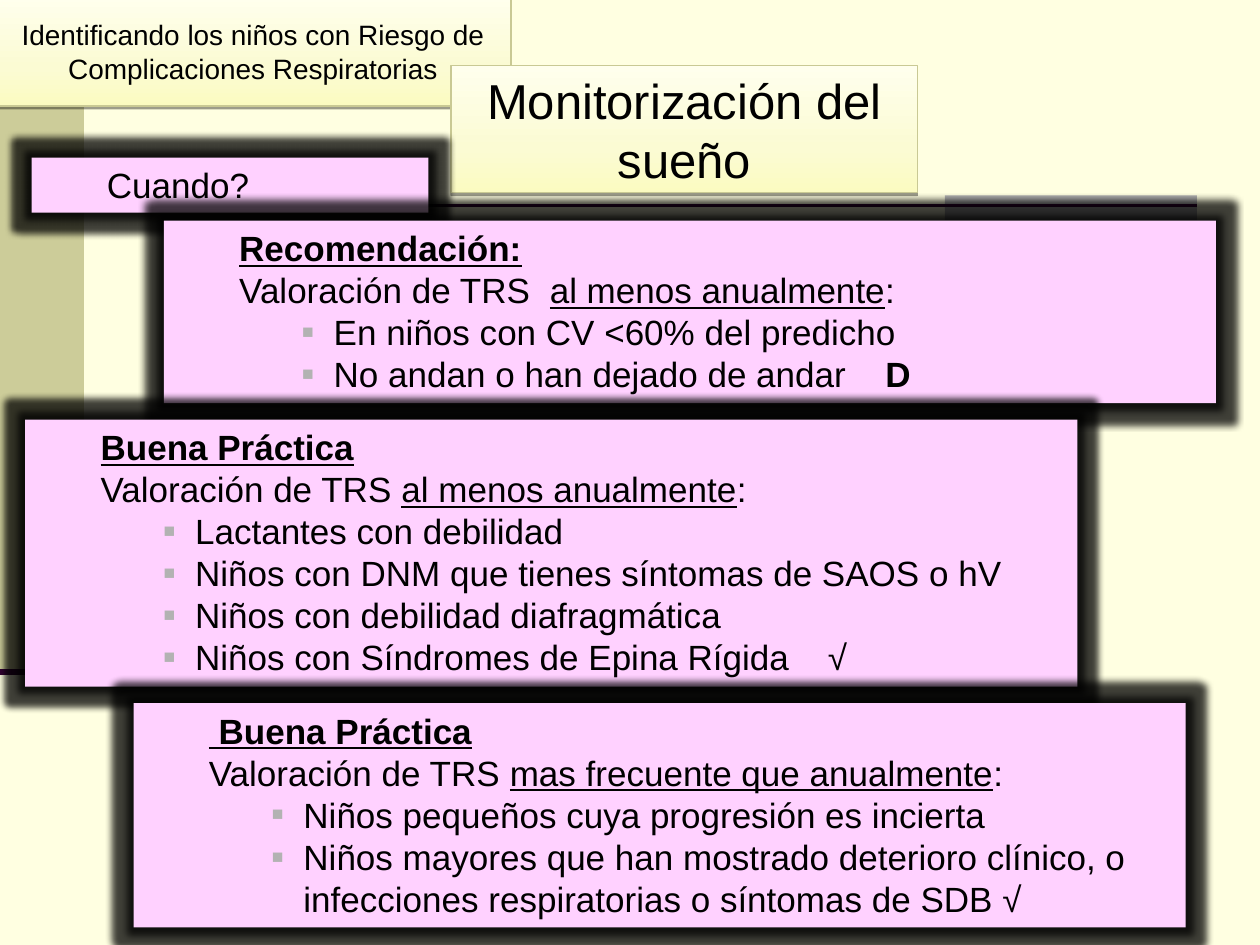
"""Build a slide of sleep-monitoring recommendations for children at respiratory risk."""
from dataclasses import dataclass

from lxml import etree
from pptx import Presentation
from pptx import util as u
from pptx.dml.color import RGBColor
from pptx.enum import shapes, text
from pptx.oxml import ns


@dataclass(frozen=True)
class Theme:
    page: str = "FFFFE1"
    band: str = "CCCC99"
    accent: str = "B2B2B2"
    rule: str = "330033"
    panel: str = "FFD1FF"
    edge: str = "C9C994"
    ink: str = "000000"
    gradient: tuple = ((0, "FFFFED"), (65, "FBFBD3"), (100, "FBFBC1"))
    font: str = "Arial"
    header: int = 16
    title: int = 28
    body: int = 20


def rgb(value):
    return RGBColor.from_string(value)


def add_xml(parent, tag, **attrs):
    child = etree.SubElement(parent, ns.qn(tag))
    for name, value in attrs.items():
        child.set(name, str(value))
    return child


def add_color(parent, value, alpha=100):
    color = add_xml(parent, "a:srgbClr", val=value)
    if alpha < 100:
        add_xml(color, "a:alpha", val=alpha * 1000)


class SlideBuilder:
    def __init__(self, prs, theme):
        self.t = theme
        self.s = prs.slides.add_slide(prs.slide_layouts[6])
        fill = self.s.background.fill
        fill.solid()
        fill.fore_color.rgb = rgb(theme.page)

    def rect(self, box, color):
        sp = self.s.shapes.add_shape(shapes.MSO_SHAPE.RECTANGLE, *map(u.Pt, box))
        sp.shadow.inherit = False
        sp.fill.solid()
        sp.fill.fore_color.rgb = rgb(color)
        sp.line.fill.background()
        return sp

    def line(self, x1, x2, y, width):
        cn = self.s.shapes.add_connector(shapes.MSO_CONNECTOR.STRAIGHT, *map(u.Pt, (x1, y, x2, y)))
        cn.line.color.rgb = rgb(self.t.rule)
        cn.line.width = u.Pt(width)
        add_xml(cn._element.spPr, "a:effectLst")

    def run(self, p, words, size, **style):
        r = p.add_run()
        r.text = words
        r.font.color.rgb = rgb(self.t.ink)
        for name, value in {"name": self.t.font, "size": u.Pt(size), **style}.items():
            setattr(r.font, name, value)

    def frame(self, sp, anchor):
        tf = sp.text_frame
        for name, value in {"word_wrap": True, "vertical_anchor": anchor}.items():
            setattr(tf, name, value)
        return tf

    def plaque(self, box, words, size):
        sp = self.rect(box, self.t.page)
        sp.fill.gradient()
        sp.fill.gradient_angle = 270
        stops = sp._element.spPr.find(ns.qn("a:gradFill")).find(ns.qn("a:gsLst"))
        for stop in list(stops):
            stops.remove(stop)
        for position, color in self.t.gradient:
            add_color(add_xml(stops, "a:gs", pos=position * 1000), color)
        sp.line.color.rgb = rgb(self.t.edge)
        sp.line.width = u.Pt(0.75)
        effects = sp._element.spPr.find(ns.qn("a:effectLst"))
        shadow = add_xml(effects, "a:outerShdw", blurRad=0, dist=u.Pt(1.6), dir=5400000, rotWithShape=0)
        add_color(shadow, self.t.ink, 38)
        p = self.frame(sp, text.MSO_ANCHOR.MIDDLE).paragraphs[0]
        p.alignment = text.PP_ALIGN.CENTER
        self.run(p, words, size)

    def panel(self, box):
        sp = self.rect(box, self.t.panel)
        effects = sp._element.spPr.find(ns.qn("a:effectLst"))
        add_color(add_xml(effects, "a:glow", rad=u.Pt(8)), self.t.ink, 75)
        tf = self.frame(sp, text.MSO_ANCHOR.TOP)
        p = tf.paragraphs[0]
        self.indent(p, 1, 36, 0)
        return tf, p

    def indent(self, p, level, left, first):
        p.level = level
        p.alignment = text.PP_ALIGN.LEFT
        pPr = p._p.get_or_add_pPr()
        pPr.set("marL", str(u.Pt(left)))
        pPr.set("indent", str(u.Pt(first)))
        return pPr

    def label(self, box, words):
        self.run(self.panel(box)[1], words, self.t.body)

    def advice(self, box, heading, lead, stress, items):
        tf, p = self.panel(box)
        self.run(p, heading, self.t.body, bold=True, underline=True)
        p.add_line_break()
        for words, underline in ((lead, False), (stress, True), (":", False)):
            self.run(p, words, self.t.body, underline=underline)
        for words, grade in items:
            self.bullet(tf.add_paragraph(), words, grade)

    def bullet(self, p, words, grade):
        pPr = self.indent(p, 2, 90, -18)
        add_color(add_xml(pPr, "a:buClr"), self.t.accent)
        add_xml(pPr, "a:buSzPct", val=55000)
        add_xml(pPr, "a:buFont", typeface=self.t.font)
        add_xml(pPr, "a:buChar", char="■")
        self.run(p, words, self.t.body)
        if grade:
            self.run(p, grade, self.t.body, bold=grade.strip() == "D")


def main():
    prs = Presentation()
    prs.slide_width, prs.slide_height = u.Pt(720), u.Pt(540)
    t = Theme()
    b = SlideBuilder(prs, t)

    b.rect((0, 0, 48, 384), t.band)
    b.rect((540, 111.6, 144, 14.4), t.accent)
    b.line(30, 684, 117.4, 1.5)
    b.line(0, 48, 384, 3.5)

    b.plaque((-3, -2, 295, 62.6),
             "Identificando los niños con Riesgo de Complicaciones Respiratorias", t.header)
    b.plaque((257.8, 37.4, 266.4, 72.7), "Monitorización del sueño", t.title)

    b.label((18, 90, 226.8, 31.5), "Cuando?")
    b.advice((93.6, 126, 601.2, 104.4), "Recomendación:",
             "Valoración de TRS  ", "al menos anualmente",
             [("En niños con CV <60% del predicho", None),
              ("No andan o han dejado de andar", "    D")])
    b.advice((14.4, 239.8, 601.2, 152.6), "Buena Práctica",
             "Valoración de TRS ", "al menos anualmente",
             [("Lactantes con debilidad", None),
              ("Niños con DNM que tienes síntomas de SAOS o hV", None),
              ("Niños con debilidad diafragmática", None),
              ("Niños con Síndromes de Epina Rígida", "    √")])
    b.advice((76.3, 401.8, 601.2, 128.2), " Buena Práctica",
             "Valoración de TRS ", "mas frecuente que anualmente",
             [("Niños pequeños cuya progresión es incierta", None),
              ("Niños mayores que han mostrado deterioro clínico, o infecciones "
               "respiratorias o síntomas de SDB", " √")])
    prs.save("out.pptx")


if __name__ == "__main__":
    main()
